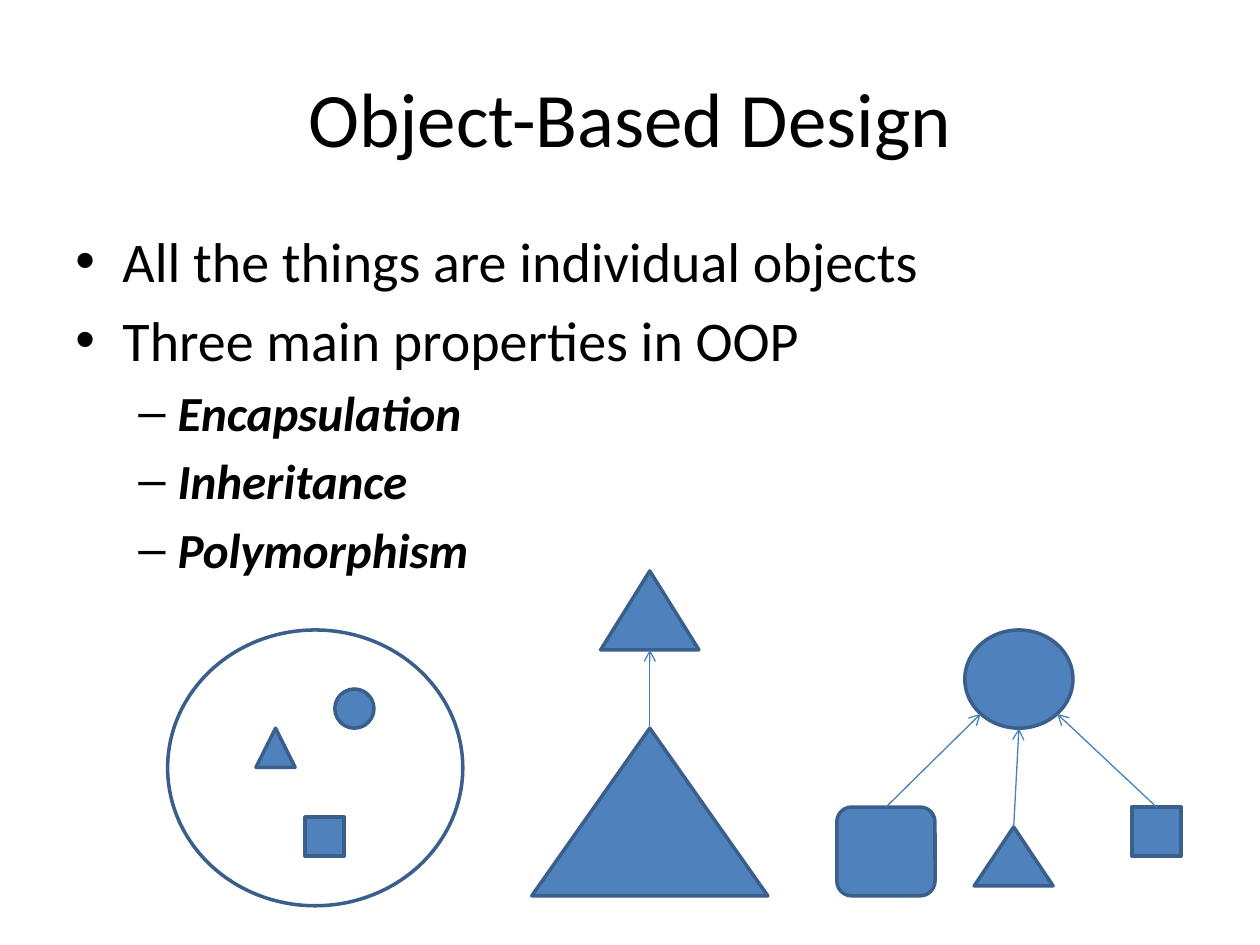
from pptx import Presentation
from pptx import util as u
from pptx.dml.color import RGBColor
from pptx.enum import shapes, text
from pptx.oxml.ns import qn
from lxml import etree
import math

FONT = "Calibri"
COL = {"ink": "000000", "fill": "4F81BD", "edge": "3A5F8C", "link": "4B7EBC"}
TITLE = "Object-Based Design"
# text, level
POINTS = [
    ("All the things are individual objects", 0),
    ("Three main properties in OOP", 0),
    ("Encapsulation", 1),
    ("Inheritance", 1),
    ("Polymorphism", 1),
]
# per level: bullet, left margin and hanging indent in cm, space before in pt, font format
LEVELS = [
    ("•", 0.95, 0.95, 6.4, dict(size=32)),
    ("–", 2.06, 0.79, 5.5, dict(size=28, bold=True, italic=True)),
]
# name: kind, left, top, width, height in cm, filled
FORMS = {
    "capsule": ("OVAL", 3.38, 12.7, 5.95, 5.56, False),
    "part tri": ("ISOSCELES_TRIANGLE", 5.16, 14.68, 0.79, 0.79, True),
    "part dot": ("OVAL", 6.75, 13.89, 0.79, 0.79, True),
    "part box": ("RECTANGLE", 6.15, 16.47, 0.79, 0.79, True),
    "parent": ("ISOSCELES_TRIANGLE", 12.11, 11.51, 1.98, 1.59, True),
    "child": ("ISOSCELES_TRIANGLE", 10.72, 14.68, 4.76, 3.38, True),
    "base": ("OVAL", 19.45, 12.7, 2.18, 1.98, True),
    "round": ("ROUNDED_RECTANGLE", 16.87, 16.27, 1.98, 1.79, True),
    "square": ("RECTANGLE", 22.82, 16.27, 0.99, 0.99, True),
    "tri": ("ISOSCELES_TRIANGLE", 19.64, 16.67, 1.59, 1.19, True),
}
# from, to, angle on the target's outline (90 is its bottom)
LINKS = [("child", "parent", 90), ("round", "base", 135),
         ("tri", "base", 90), ("square", "base", 45)]


def rgb(key):
    return RGBColor.from_string(COL[key])


def write(par, words, size=32, bold=False, italic=False, align=None):
    run = par.add_run()
    run.text = words
    font = run.font
    font.name, font.size = FONT, u.Pt(size)
    font.bold, font.italic = bold, italic
    font.color.rgb = rgb("ink")
    par.alignment = align


def bullet(par, sign, left, hang):
    props = par._p.get_or_add_pPr()
    props.set("marL", str(u.Cm(left)))
    props.set("indent", str(-u.Cm(hang)))
    etree.SubElement(props, qn("a:buFont")).set("typeface", "Arial")
    etree.SubElement(props, qn("a:buChar")).set("char", sign)


def draw(slide, kind, left, top, width, height, full):
    box = map(u.Cm, (left, top, width, height))
    form = slide.shapes.add_shape(getattr(shapes.MSO_SHAPE, kind), *box)
    form.shadow.inherit = False
    if full:
        form.fill.solid()
        form.fill.fore_color.rgb = rgb("fill")
    else:
        form.fill.background()
    form.line.color.rgb = rgb("edge")
    form.line.width = u.Pt(2)
    return form


def link(slide, start, goal, angle):
    turn = math.radians(angle)
    x = goal.left + goal.width / 2 * (1 + math.cos(turn))
    y = goal.top + goal.height / 2 * (1 + math.sin(turn))
    line = slide.shapes.add_connector(
        shapes.MSO_CONNECTOR.STRAIGHT, start.left, start.top, int(x), int(y))
    line.begin_connect(start, 0)
    line.line.color.rgb = rgb("link")
    line.line.width = u.Pt(0.75)
    etree.SubElement(line.line._get_or_add_ln(), qn("a:tailEnd")).set("type", "arrow")
    etree.SubElement(line._element.spPr, qn("a:effectLst"))


def main():
    deck = Presentation()
    deck.slide_width, deck.slide_height = u.Cm(25.4), u.Cm(19.05)
    slide = deck.slides.add_slide(deck.slide_layouts[5])

    # Title
    head = slide.shapes.title
    head.left, head.top, head.width, head.height = map(u.Cm, (1.27, 0.76, 22.86, 3.18))
    head.text_frame.vertical_anchor = text.MSO_ANCHOR.MIDDLE
    write(head.text_frame.paragraphs[0], TITLE, size=44, align=text.PP_ALIGN.CENTER)

    # Bullet list
    frame = slide.shapes.add_textbox(*map(u.Cm, (1.27, 4.45, 22.86, 12.57))).text_frame
    frame.word_wrap = True
    for i, (words, level) in enumerate(POINTS):
        par = frame.add_paragraph() if i else frame.paragraphs[0]
        sign, left, hang, gap, style = LEVELS[level]
        par.level = level
        par.space_before = u.Pt(gap)
        write(par, words, **style)
        bullet(par, sign, left, hang)

    # Diagrams of the three properties
    made = {name: draw(slide, *form) for name, form in FORMS.items()}
    for start, goal, angle in LINKS:
        link(slide, made[start], made[goal], angle)

    deck.save("out.pptx")


if __name__ == "__main__":
    main()
